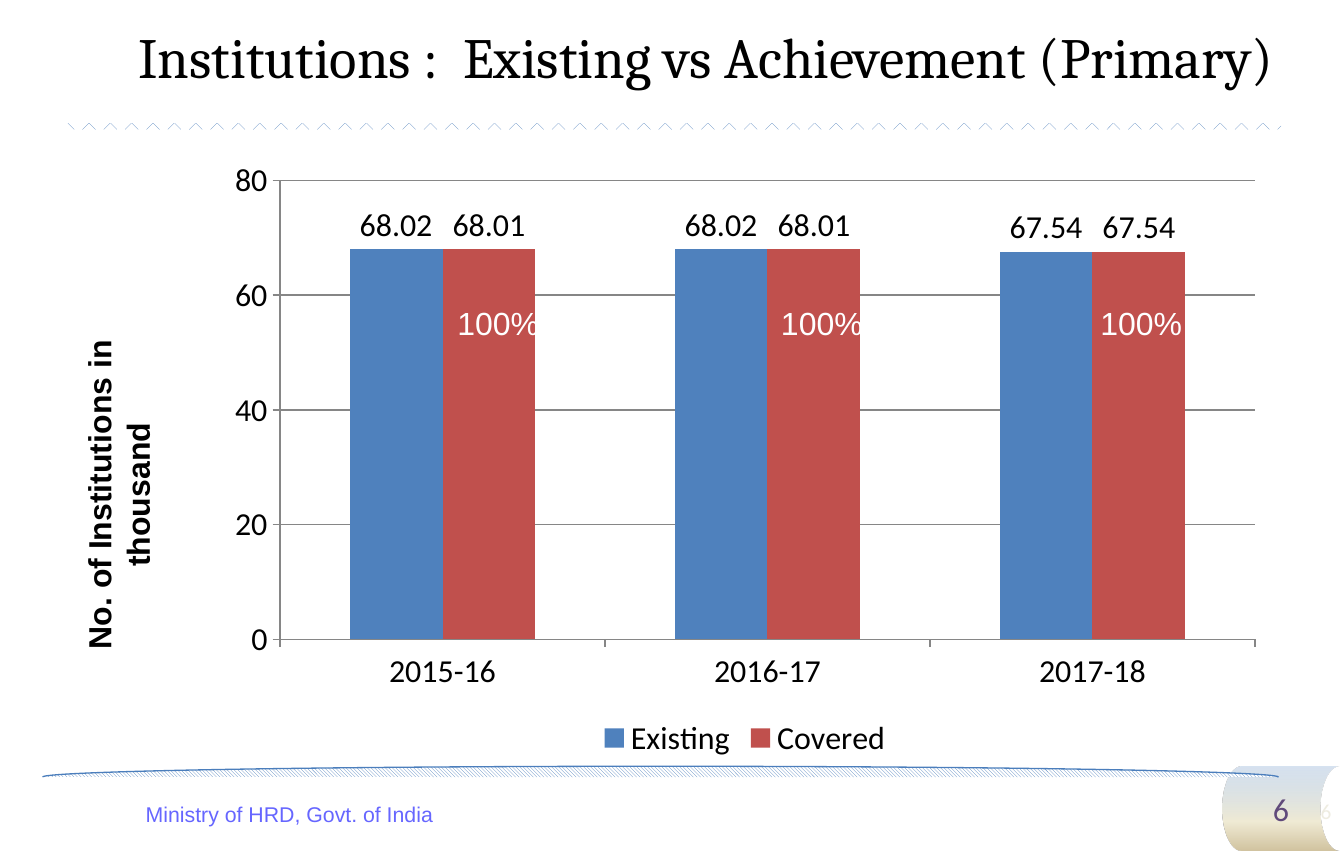
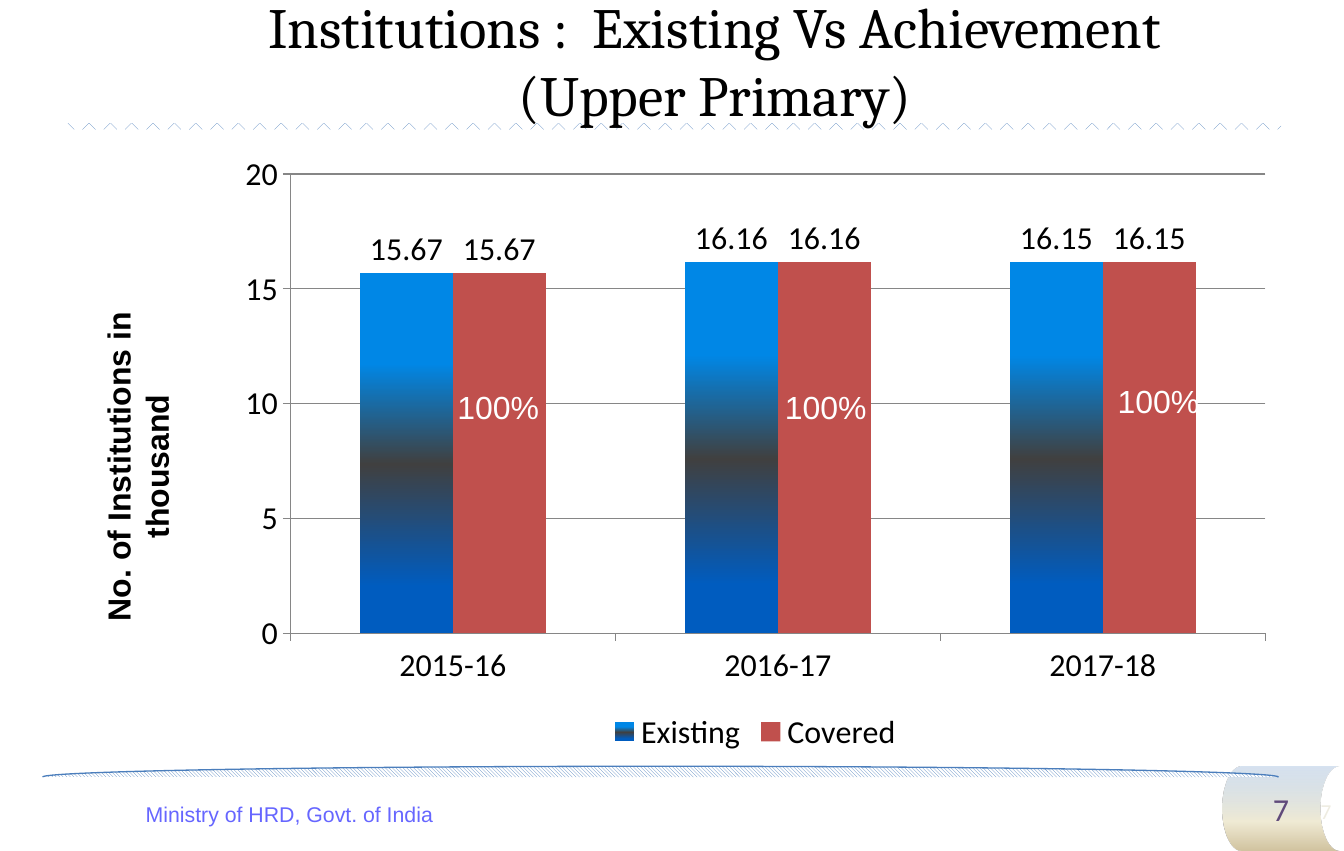
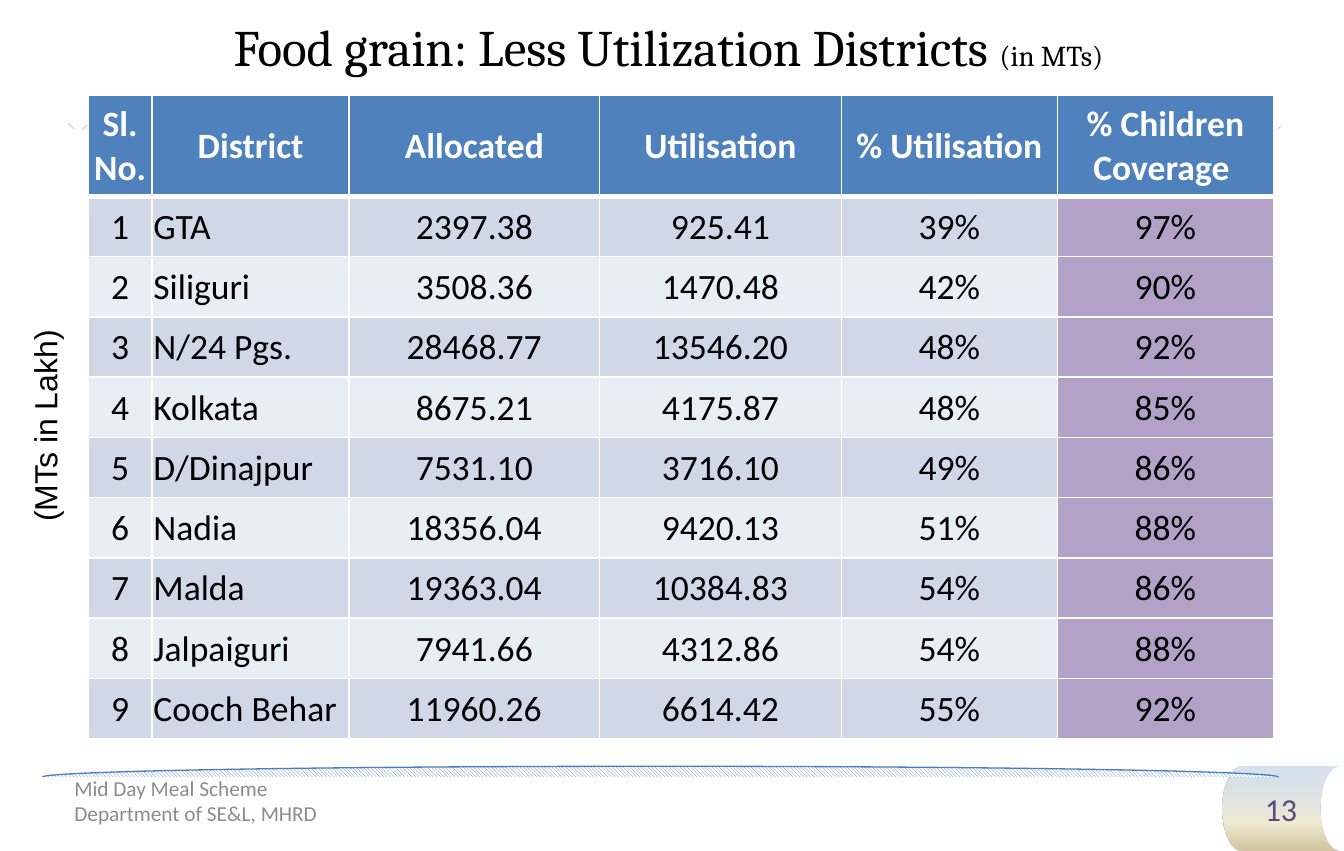
import dataclasses
from typing import Any

import pptx
import pptx.chart.data
import pptx.dml.color
import pptx.enum.chart
import pptx.enum.dml
import pptx.enum.shapes
import pptx.enum.text
import pptx.oxml
import pptx.oxml.ns
import pptx.util

Pt = pptx.util.Pt
Align = pptx.enum.text.PP_ALIGN
Anchor = pptx.enum.text.MSO_ANCHOR
AutoSize = pptx.enum.text.MSO_AUTO_SIZE
Shape = pptx.enum.shapes.MSO_SHAPE
Pattern = pptx.enum.dml.MSO_PATTERN
qn = pptx.oxml.ns.qn

COLORS = {
    "black": "000000", "white": "FFFFFF", "blue": "4F81BD", "red": "C0504D",
    "arc_line": "4B7EBC", "grid": "868686", "ministry": "6666FF",
    "department": "8C8C8C", "badge_text": "604A7B", "faint": "EEECE1",
    "band_dark": "D0D8E8", "band_light": "E9EDF4", "coverage": "B3A2C7",
    "badge_top": "B9CDE5", "badge_middle": "F0EBD5", "badge_bottom": "D1C39F",
    "bar_top": "0087E6", "bar_middle": "404040", "bar_bottom": "005CBF",
}


# Descriptions of repeated elements
@dataclasses.dataclass(frozen=True)
class Box:
    left: float
    top: float
    width: float
    height: float

    def lengths(self) -> tuple[int, int, int, int]:
        return Pt(self.left), Pt(self.top), Pt(self.width), Pt(self.height)


@dataclasses.dataclass(frozen=True)
class TextStyle:
    size: float
    font: str
    color: str
    bold: bool = False


@dataclasses.dataclass(frozen=True)
class GradientStop:
    position: int
    color: str
    opacity: int = 100


@dataclasses.dataclass(frozen=True)
class ChartPage:
    number: int
    title: str
    title_box: Box
    chart_box: Box
    note_box: Box
    existing: tuple[float, ...]
    covered: tuple[float, ...]
    maximum: int
    step: int
    tags: tuple[tuple[float, float], ...]
    gradient_bars: bool = False


TITLE = TextStyle(32, "Cambria", "black")
TABLE_TITLE = TextStyle(28.8, "Cambria", "black")
TITLE_UNIT = TextStyle(16.2, "Cambria", "black")
BADGE = TextStyle(18, "Calibri", "badge_text")
MINISTRY = TextStyle(12, "Arial", "ministry")
DEPARTMENT = TextStyle(12, "Calibri", "department")
FAINT_NUMBER = TextStyle(12, "Calibri", "faint")
AXIS_NOTE = TextStyle(18, "Arial", "black", True)
UNIT_NOTE = TextStyle(18, "Arial", "black")
TAG = TextStyle(18, "Arial", "white")
CHART_TEXT = TextStyle(18, "Calibri", "black")
TABLE_HEAD = TextStyle(20, "Calibri", "white", True)
TABLE_BODY = TextStyle(20, "Calibri", "black")

BADGE_GRADIENT = (GradientStop(0, "badge_top", 58), GradientStop(65, "badge_middle"),
                  GradientStop(100, "badge_bottom"))
BAR_GRADIENT = (GradientStop(25, "bar_top"), GradientStop(53, "bar_middle"),
                GradientStop(87, "bar_bottom"))

YEARS = ("2015-16", "2016-17", "2017-18")
CHART_PAGES = (
    ChartPage(6, "Institutions :  Existing vs Achievement (Primary) ",
              Box(48.2, 0, 706.3, 62.6), Box(120.4, 83.7, 598.3, 346.3),
              Box(41.2, 117, 59, 255.6),
              (68.02, 68.02, 67.54), (68.01, 68.01, 67.54), 80, 20,
              ((250.4, 167.6), (432.7, 167.6), (612.5, 167.6))),
    ChartPage(7, "Institutions :  Existing Vs Achievement \v(Upper Primary) ",
              Box(62.4, 2.2, 687.6, 62.6), Box(126.2, 80.2, 598.3, 346.3),
              Box(52, 101.1, 59, 255.6),
              (15.67, 16.16, 16.15), (15.67, 16.16, 16.15), 20, 5,
              ((250.4, 214.4), (434.9, 214.4), (622.3, 211.2)), True),
)

COLUMN_WIDTHS = (36, 110.9, 141.1, 136.1, 121.7, 121.7)
HEADINGS = ("Sl. No.", "District", "Allocated", "Utilisation", "% Utilisation",
            "% Children Coverage ")
DISTRICTS = (
    ("GTA", "2397.38", "925.41", "39%", "97%"),
    ("Siliguri", "3508.36", "1470.48", "42%", "90%"),
    ("N/24 Pgs.", "28468.77", "13546.20", "48%", "92%"),
    ("Kolkata", "8675.21", "4175.87", "48%", "85%"),
    ("D/Dinajpur", "7531.10", "3716.10", "49%", "86%"),
    ("Nadia", "18356.04", "9420.13", "51%", "88%"),
    ("Malda", "19363.04", "10384.83", "54%", "86%"),
    ("Jalpaiguri", "7941.66", "4312.86", "54%", "88%"),
    ("Cooch Behar", "11960.26", "6614.42", "55%", "92%"),
)


# Formatting helpers
def rgb(name: str) -> Any:
    return pptx.dml.color.RGBColor.from_string(COLORS[name])


def format_font(font: Any, style: TextStyle) -> None:
    font.size = Pt(style.size)
    font.name = style.font
    font.bold = style.bold
    font.color.rgb = rgb(style.color)


def format_text(text_frame: Any, style: TextStyle, align: Any = Align.LEFT) -> None:
    for paragraph in text_frame.paragraphs:
        paragraph.alignment = align
        for run in paragraph.runs:
            format_font(run.font, style)


def fill_solid(fill: Any, color: str) -> None:
    fill.solid()
    fill.fore_color.rgb = rgb(color)


def fill_pattern(fill: Any, pattern: Any) -> None:
    fill.patterned()
    fill.pattern = pattern
    fill.fore_color.rgb = rgb("blue")
    fill.back_color.rgb = rgb("white")


def fill_gradient(fill: Any, owner: Any, stops: tuple[GradientStop, ...]) -> None:
    """Fill from top to bottom; owner is the element that holds the fill."""
    fill.gradient()
    fill.gradient_angle = 270
    stop_list = next(owner.iter(qn("a:gsLst")))
    for old_stop in list(stop_list):
        stop_list.remove(old_stop)
    for stop in stops:
        stop_list.append(pptx.oxml.parse_xml(
            f'<a:gs {pptx.oxml.ns.nsdecls("a")} pos="{stop.position * 1000}">'
            f'<a:srgbClr val="{COLORS[stop.color]}">'
            f'<a:alpha val="{stop.opacity * 1000}"/></a:srgbClr></a:gs>'))


def set_borders(cell: Any, bottom: float) -> None:
    properties = cell._tc.get_or_add_tcPr()
    widths = {"lnL": 1, "lnR": 1, "lnT": 1, "lnB": bottom}
    for index, (side, width) in enumerate(widths.items()):
        properties.insert(index, pptx.oxml.parse_xml(
            f'<a:{side} {pptx.oxml.ns.nsdecls("a")} w="{Pt(width)}"><a:solidFill>'
            f'<a:srgbClr val="{COLORS["white"]}"/></a:solidFill></a:{side}>'))


# Drawing functions
def add_preset(slide: Any, preset: Any, box: Box) -> Any:
    shape = slide.shapes.add_shape(preset, *box.lengths())
    shape.shadow.inherit = False
    shape.line.fill.background()
    return shape


def add_text(slide: Any, box: Box, text: str, style: TextStyle, align: Any = Align.LEFT,
             anchor: Any = Anchor.TOP, wrap: bool = True) -> Any:
    shape = slide.shapes.add_textbox(*box.lengths())
    text_frame = shape.text_frame
    text_frame.text = text
    text_frame.word_wrap = wrap
    text_frame.vertical_anchor = anchor
    format_text(text_frame, style, align)
    return shape


def add_page(presentation: Any, number: int, title: str, title_box: Box,
             title_style: TextStyle) -> Any:
    """Add a slide with its title and the parts that all slides share."""
    slide = presentation.slides.add_slide(presentation.slide_layouts[5])
    badge = add_preset(slide, Shape.FLOWCHART_STORED_DATA, Box(688.3, 431.4, 66.2, 47.6))
    fill_gradient(badge.fill, badge.element, BADGE_GRADIENT)
    badge.text_frame.text = str(number)
    badge.text_frame.vertical_anchor = Anchor.MIDDLE
    format_text(badge.text_frame, BADGE, Align.CENTER)

    title_rule = add_preset(slide, Shape.RECTANGLE, Box(38.2, 69.3, 683.3, 3.6))
    fill_pattern(title_rule.fill, Pattern.DIAGONAL_BRICK)

    footer_arc = add_preset(slide, Shape.ARC, Box(23.8, 431.4, 696.2, 12.2))
    footer_arc.adjustments[0] = 108.018
    footer_arc.adjustments[1] = 0
    fill_pattern(footer_arc.fill, Pattern.DARK_DOWNWARD_DIAGONAL)
    footer_arc.line.color.rgb = rgb("arc_line")
    footer_arc.line.width = Pt(0.75)

    # The title lies in front of the shared parts
    heading = slide.shapes.title
    slide.shapes.element.append(heading.element)
    heading.left, heading.top, heading.width, heading.height = title_box.lengths()
    heading.text_frame.text = title
    heading.text_frame.auto_size = AutoSize.NONE
    heading.text_frame.vertical_anchor = Anchor.MIDDLE
    format_text(heading.text_frame, title_style, Align.CENTER)
    return slide


def add_column_chart(slide: Any, page: ChartPage) -> None:
    data = pptx.chart.data.CategoryChartData(number_format="0.00")
    data.categories = YEARS
    data.add_series("Existing", page.existing)
    data.add_series("Covered", page.covered)
    chart = slide.shapes.add_chart(pptx.enum.chart.XL_CHART_TYPE.COLUMN_CLUSTERED,
                                   *page.chart_box.lengths(), data).chart
    format_font(chart.font, CHART_TEXT)
    chart.has_title = False
    chart.has_legend = True
    chart.legend.position = pptx.enum.chart.XL_LEGEND_POSITION.BOTTOM
    chart.legend.include_in_layout = False

    values = chart.value_axis
    values.minimum_scale, values.maximum_scale = 0, page.maximum
    values.major_unit = page.step
    values.has_major_gridlines = True
    values.tick_labels.number_format = "0"
    values.tick_labels.number_format_is_linked = False
    for part in (values, values.major_gridlines, chart.category_axis):
        part.format.line.color.rgb = rgb("grid")
        part.format.line.width = Pt(0.75)
    for axis in (values, chart.category_axis):
        axis.major_tick_mark = pptx.enum.chart.XL_TICK_MARK.OUTSIDE

    plot = chart.plots[0]
    plot.gap_width = 150
    plot.overlap = 0
    plot.vary_by_categories = False
    for series, color in zip(plot.series, ("blue", "red")):
        fill_solid(series.format.fill, color)
        labels = series.data_labels
        labels.show_value = True
        labels.number_format = "0.00"
        labels.number_format_is_linked = False
        labels.position = pptx.enum.chart.XL_LABEL_POSITION.OUTSIDE_END
    if page.gradient_bars:
        fill_gradient(plot.series[0].format.fill, chart.element, BAR_GRADIENT)


def add_chart_page(presentation: Any, page: ChartPage) -> None:
    slide = add_page(presentation, page.number, page.title, page.title_box, TITLE)
    add_text(slide, Box(14.8, 447.3, 296.6, 22.3), "Ministry of HRD, Govt. of India",
             MINISTRY, Align.CENTER)

    # Axis note, read from bottom to top
    note = add_text(slide, page.note_box, "No. of Institutions in thousand",
                    AXIS_NOTE, Align.CENTER)
    note.rotation = 180
    note.text_frame.auto_size = AutoSize.SHAPE_TO_FIT_TEXT
    note.text_frame.paragraphs[0].space_before = Pt(9)
    next(note.element.iter(qn("a:bodyPr"))).set("vert", "eaVert")

    add_text(slide, Box(693.8, 443.7, 63, 25.9), str(page.number), FAINT_NUMBER,
             Align.RIGHT, Anchor.MIDDLE)
    add_column_chart(slide, page)
    for left, top in page.tags:
        add_text(slide, Box(left, top, 61.2, 28.8), "100%", TAG, wrap=False)


def fill_cell(cell: Any, text: str, style: TextStyle, color: str, align: Any,
              bottom: float = 1) -> None:
    cell.text_frame.text = text
    cell.vertical_anchor = Anchor.MIDDLE
    cell.margin_left = cell.margin_right = cell.margin_top = Pt(0.7)
    cell.margin_bottom = Pt(0)
    format_text(cell.text_frame, style, align)
    fill_solid(cell.fill, color)
    set_borders(cell, bottom)


def add_district_table(slide: Any) -> None:
    head_height, row_height = 56.9, 33.94
    box = Box(49.7, 53.6, sum(COLUMN_WIDTHS), head_height + row_height * len(DISTRICTS))
    table = slide.shapes.add_table(len(DISTRICTS) + 1, len(HEADINGS), *box.lengths()).table
    for column, width in zip(table.columns, COLUMN_WIDTHS):
        column.width = Pt(width)
    for index, row in enumerate(table.rows):
        row.height = Pt(row_height if index else head_height)

    for column, heading in enumerate(HEADINGS):
        fill_cell(table.cell(0, column), heading, TABLE_HEAD, "blue", Align.CENTER, 3)
    for number, district in enumerate(DISTRICTS, start=1):
        band = "band_dark" if number % 2 else "band_light"
        for column, text in enumerate((str(number), *district)):
            color = "coverage" if column == len(HEADINGS) - 1 else band
            align = Align.LEFT if column == 1 else Align.CENTER
            fill_cell(table.cell(number, column), text, TABLE_BODY, color, align)


def add_table_page(presentation: Any) -> None:
    slide = add_page(presentation, 13, "Food grain: Less Utilization Districts ",
                     Box(35.8, 5.8, 681.1, 40.3), TABLE_TITLE)
    unit = slide.shapes.title.text_frame.paragraphs[0].add_run()
    unit.text = "(in MTs)"
    format_font(unit.font, TITLE_UNIT)
    add_district_table(slide)
    add_text(slide, Box(34.8, 438, 239.8, 25.2),
             "Mid Day Meal Scheme\nDepartment of SE&L, MHRD", DEPARTMENT,
             anchor=Anchor.MIDDLE)
    unit_note = add_text(slide, Box(-36.7, 224.6, 123.8, 28.8), "(MTs in Lakh)",
                         UNIT_NOTE, wrap=False)
    unit_note.rotation = 270


def main() -> None:
    presentation = pptx.Presentation()
    presentation.slide_width, presentation.slide_height = Pt(756.85), Pt(479.05)
    for page in CHART_PAGES:
        add_chart_page(presentation, page)
    add_table_page(presentation)
    presentation.save("out.pptx")


if __name__ == "__main__":
    main()
